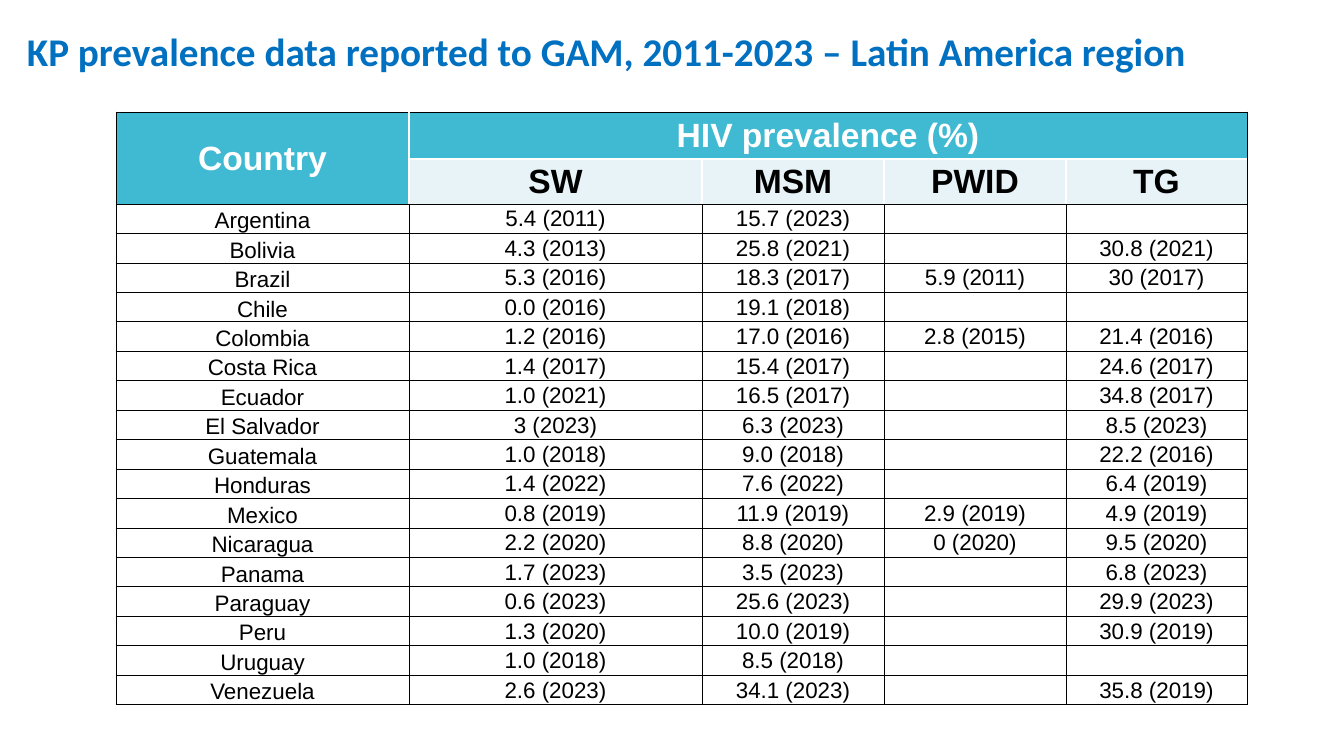
import pptx
import pptx.dml.color
import pptx.enum.text
import pptx.util
from lxml import etree
from pptx.oxml.ns import qn

# Content
TITLE = "KP prevalence data reported to GAM, 2011-2023 – Latin America region"
HEADERS = [
    ("Country", "HIV prevalence (%)", "", "", ""),
    ("", "SW", "MSM", "PWID", "TG"),
]
COUNTRIES = [
    ("Argentina", "5.4 (2011)", "15.7 (2023)", "", ""),
    ("Bolivia", "4.3 (2013)", "25.8 (2021)", "", "30.8 (2021)"),
    ("Brazil", "5.3 (2016)", "18.3 (2017)", "5.9 (2011)", "30 (2017)"),
    ("Chile", "0.0 (2016)", "19.1 (2018)", "", ""),
    ("Colombia", "1.2 (2016)", "17.0 (2016)", "2.8 (2015)", "21.4 (2016)"),
    ("Costa Rica", "1.4 (2017)", "15.4 (2017)", "", "24.6 (2017)"),
    ("Ecuador", "1.0 (2021)", "16.5 (2017)", "", "34.8 (2017)"),
    ("El Salvador", "3 (2023)", "6.3 (2023)", "", "8.5 (2023)"),
    ("Guatemala", "1.0 (2018)", "9.0 (2018)", "", "22.2 (2016)"),
    ("Honduras", "1.4 (2022)", "7.6 (2022)", "", "6.4 (2019)"),
    ("Mexico", "0.8 (2019)", "11.9 (2019)", "2.9 (2019)", "4.9 (2019)"),
    ("Nicaragua", "2.2 (2020)", "8.8 (2020)", "0 (2020)", "9.5 (2020)"),
    ("Panama", "1.7 (2023)", "3.5 (2023)", "", "6.8 (2023)"),
    ("Paraguay", "0.6 (2023)", "25.6 (2023)", "", "29.9 (2023)"),
    ("Peru", "1.3 (2020)", "10.0 (2019)", "", "30.9 (2019)"),
    ("Uruguay", "1.0 (2018)", "8.5 (2018)", "", ""),
    ("Venezuela", "2.6 (2023)", "34.1 (2023)", "", "35.8 (2019)"),
]
ROWS = HEADERS + COUNTRIES

# Layout in px, colours and formats
SCALE = 914400 / 100.8
SLIDE_SIZE = (1344, 756)
TITLE_BOX = (17, 22, 1283, 58)
TABLE_LEFT, TABLE_TOP = 116, 112
COLUMN_WIDTHS = [293, 293, 182, 182, 181]
HEADER_HEIGHTS = [47, 45]
BODY_HEIGHT = 501
COLORS = {"title": "0070C0", "header": "40BAD2", "subheader": "E8F3F7",
          "white": "FFFFFF", "black": "000000"}
TITLE_FONT = {"name": "Calibri", "size": pptx.util.Pt(28), "bold": True}
HEADER_FONT = {"name": "Arial", "size": pptx.util.Pt(24), "bold": True}
BODY_FONT = {"name": "Arial", "size": pptx.util.Pt(16), "bold": False}
CELL_MARGINS = {"margin_left": 1, "margin_top": 1, "margin_right": 1, "margin_bottom": 0}


def px(value):
    return round(value * SCALE)


def rgb(name):
    return pptx.dml.color.RGBColor.from_string(COLORS[name])


def add_text(paragraph, text, font_format, color):
    run = paragraph.add_run()
    run.text = text
    for attribute, value in font_format.items():
        setattr(run.font, attribute, value)
    run.font.color.rgb = rgb(color)


def add_border(cell, side, color, points):
    line = etree.SubElement(cell._tc.get_or_add_tcPr(), qn(f"a:ln{side}"),
                            w=str(pptx.util.Pt(points)))
    fill = etree.SubElement(line, qn("a:solidFill"))
    etree.SubElement(fill, qn("a:srgbClr"), val=COLORS[color])


def add_borders(cell, row, column):
    """White lines between header cells, black lines everywhere else."""
    header_count, column_count = len(HEADERS), len(COLUMN_WIDTHS)
    last_row = row + max(cell.span_height, 1) - 1
    last_column = column + max(cell.span_width, 1) - 1
    in_header = row < header_count
    inner = {
        "L": in_header and column > 0,
        "R": in_header and last_column < column_count - 1,
        "T": in_header and row > 0,
        "B": last_row < header_count - 1,
    }
    for side, is_inner in inner.items():
        add_border(cell, side, *(("white", 1) if is_inner else ("black", 0.5)))


def format_cell(cell, row, column, text):
    add_borders(cell, row, column)
    for attribute, value in CELL_MARGINS.items():
        setattr(cell, attribute, px(value))
    is_header = row < len(HEADERS)
    is_top = row == 0 or (is_header and column == 0)
    anchor = pptx.enum.text.MSO_ANCHOR
    cell.vertical_anchor = anchor.BOTTOM if column == 0 and not is_header else anchor.MIDDLE
    if is_header:
        cell.fill.solid()
        cell.fill.fore_color.rgb = rgb("header" if is_top else "subheader")
    else:
        cell.fill.background()
    paragraph = cell.text_frame.paragraphs[0]
    paragraph.alignment = pptx.enum.text.PP_ALIGN.CENTER
    if text:
        add_text(paragraph, text, HEADER_FONT if is_header else BODY_FONT,
                 "white" if is_top else "black")
    else:
        # Keeps empty cells from stretching their row
        etree.SubElement(paragraph._p, qn("a:endParaRPr"), sz="1600")


def add_title(slide):
    box = slide.shapes.add_textbox(*map(px, TITLE_BOX))
    box.text_frame.word_wrap = True
    add_text(box.text_frame.paragraphs[0], TITLE, TITLE_FONT, "title")


def add_prevalence_table(slide):
    row_heights = HEADER_HEIGHTS + [BODY_HEIGHT / len(COUNTRIES)] * len(COUNTRIES)
    table = slide.shapes.add_table(
        len(ROWS), len(COLUMN_WIDTHS), px(TABLE_LEFT), px(TABLE_TOP),
        px(sum(COLUMN_WIDTHS)), px(sum(row_heights))).table
    table.first_row = table.horz_banding = False
    for column, width in zip(table.columns, COLUMN_WIDTHS):
        column.width = px(width)
    for row, height in zip(table.rows, row_heights):
        row.height = px(height)
    table.cell(0, 0).merge(table.cell(1, 0))
    table.cell(0, 1).merge(table.cell(0, 4))
    for row, texts in enumerate(ROWS):
        for column, text in enumerate(texts):
            format_cell(table.cell(row, column), row, column, text)


def main():
    presentation = pptx.Presentation()
    presentation.slide_width, presentation.slide_height = map(px, SLIDE_SIZE)
    slide = presentation.slides.add_slide(presentation.slide_layouts[6])
    add_title(slide)
    add_prevalence_table(slide)
    presentation.save("out.pptx")


if __name__ == "__main__":
    main()
